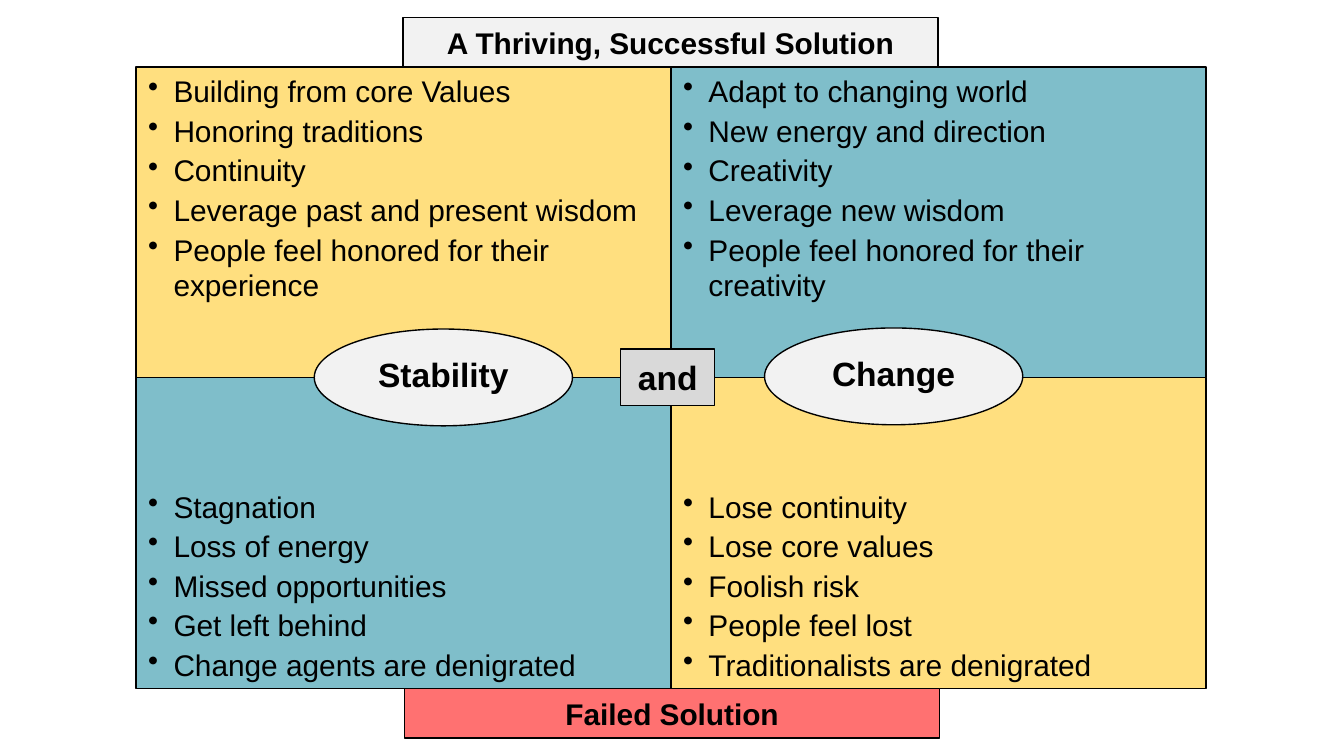
"""Build a polarity map slide contrasting stability and change."""
import pptx
import pptx.dml.color
import pptx.enum.shapes
import pptx.enum.text
import pptx.oxml.ns
import pptx.util
from lxml import etree

Cm = pptx.util.Cm
Pt = pptx.util.Pt
Shape = pptx.enum.shapes.MSO_SHAPE
Anchor = pptx.enum.text.MSO_ANCHOR
Align = pptx.enum.text.PP_ALIGN

GOLD, TEAL = "FFC000", "007F97"
QUADRANTS = [
    [
        (GOLD, ["Building from core Values", "Honoring traditions", "Continuity",
                "Leverage past and present wisdom",
                "People feel honored for their experience"]),
        (TEAL, ["Adapt to changing world", "New energy and direction", "Creativity",
                "Leverage new wisdom",
                "People feel honored for their creativity"]),
    ],
    [
        (TEAL, ["Stagnation", "Loss of energy", "Missed opportunities",
                "Get left behind", "Change agents are denigrated"]),
        (GOLD, ["Lose continuity", "Lose core values", "Foolish risk",
                "People feel lost", "Traditionalists are denigrated"]),
    ],
]
ROW_ANCHORS = [Anchor.TOP, Anchor.BOTTOM]
LABELS = [
    ("and", Shape.RECTANGLE, (11.73, 6.6, 1.78, 1.07), "D9D9D9", 18),
    ("A Thriving, Successful Solution", Shape.RECTANGLE, (7.62, 0.33, 10.11, 0.94), "F2F2F2", 16),
    ("Stability", Shape.OVAL, (5.94, 6.22, 4.88, 1.83), "F2F2F2", 18),
    ("Change", Shape.OVAL, (14.45, 6.2, 4.88, 1.83), "F2F2F2", 18),
    ("Failed Solution", Shape.RECTANGLE, (7.65, 13.01, 10.11, 0.94), "FF7171", 16),
]
GRID_LEFT, GRID_TOP = 2.57, 1.27
CELL_WIDTH, CELL_HEIGHT = 10.11, 5.87


def color(value):
    return pptx.dml.color.RGBColor.from_string(value)


def add_box(slide, kind, place, fill, anchor, margins):
    shape = slide.shapes.add_shape(kind, *[Cm(length) for length in place])
    shape.shadow.inherit = False
    shape.fill.solid()
    shape.fill.fore_color.rgb = color(fill)
    shape.line.color.rgb = color("000000")
    shape.line.width = Pt(0.75)
    frame = shape.text_frame
    frame.word_wrap = True
    frame.vertical_anchor = anchor
    frame.margin_left = frame.margin_right = Cm(margins[0])
    frame.margin_top = frame.margin_bottom = Cm(margins[1])
    return shape


def add_text(paragraph, text, size, bold=False):
    run = paragraph.add_run()
    run.text = text
    run.font.name = "Arial"
    run.font.size = Pt(size)
    run.font.bold = bold
    run.font.color.rgb = color("000000")


def set_transparency(shape, percent):
    tag = pptx.oxml.ns.qn("a:srgbClr")
    fill_color = shape.fill._xPr.find(pptx.oxml.ns.qn("a:solidFill")).find(tag)
    alpha = etree.SubElement(fill_color, pptx.oxml.ns.qn("a:alpha"))
    alpha.set("val", str((100 - percent) * 1000))


def add_bullet(paragraph):
    properties = paragraph._p.get_or_add_pPr()
    properties.set("marL", str(Cm(0.48)))
    properties.set("indent", str(-Cm(0.48)))
    bullet = etree.SubElement(properties, pptx.oxml.ns.qn("a:buChar"))
    bullet.set("char", "•")


def add_quadrant(slide, row, column, fill, items):
    place = (GRID_LEFT + column * CELL_WIDTH, GRID_TOP + row * CELL_HEIGHT,
             CELL_WIDTH, CELL_HEIGHT)
    shape = add_box(slide, Shape.FLOWCHART_PROCESS, place, fill,
                    ROW_ANCHORS[row], (0.23, 0.11))
    set_transparency(shape, 50)
    frame = shape.text_frame
    for index, item in enumerate(items):
        paragraph = frame.add_paragraph() if index else frame.paragraphs[0]
        add_bullet(paragraph)
        paragraph.alignment = Align.LEFT
        paragraph.space_before = Pt(2 if index else 0)
        add_text(paragraph, item, 16)


def add_label(slide, text, kind, place, fill, size):
    shape = add_box(slide, kind, place, fill, Anchor.MIDDLE, (0.25, 0.13))
    paragraph = shape.text_frame.paragraphs[0]
    paragraph.alignment = Align.CENTER
    if kind == Shape.OVAL:
        paragraph.line_spacing = Pt(17.9)
    add_text(paragraph, text, size, bold=True)


def main():
    presentation = pptx.Presentation()
    presentation.slide_width = Cm(25.4)
    presentation.slide_height = Cm(14.29)
    slide = presentation.slides.add_slide(presentation.slide_layouts[6])
    for row, cells in enumerate(QUADRANTS):
        for column, (fill, items) in enumerate(cells):
            add_quadrant(slide, row, column, fill, items)
    for label in LABELS:
        add_label(slide, *label)
    presentation.save("out.pptx")


if __name__ == "__main__":
    main()
